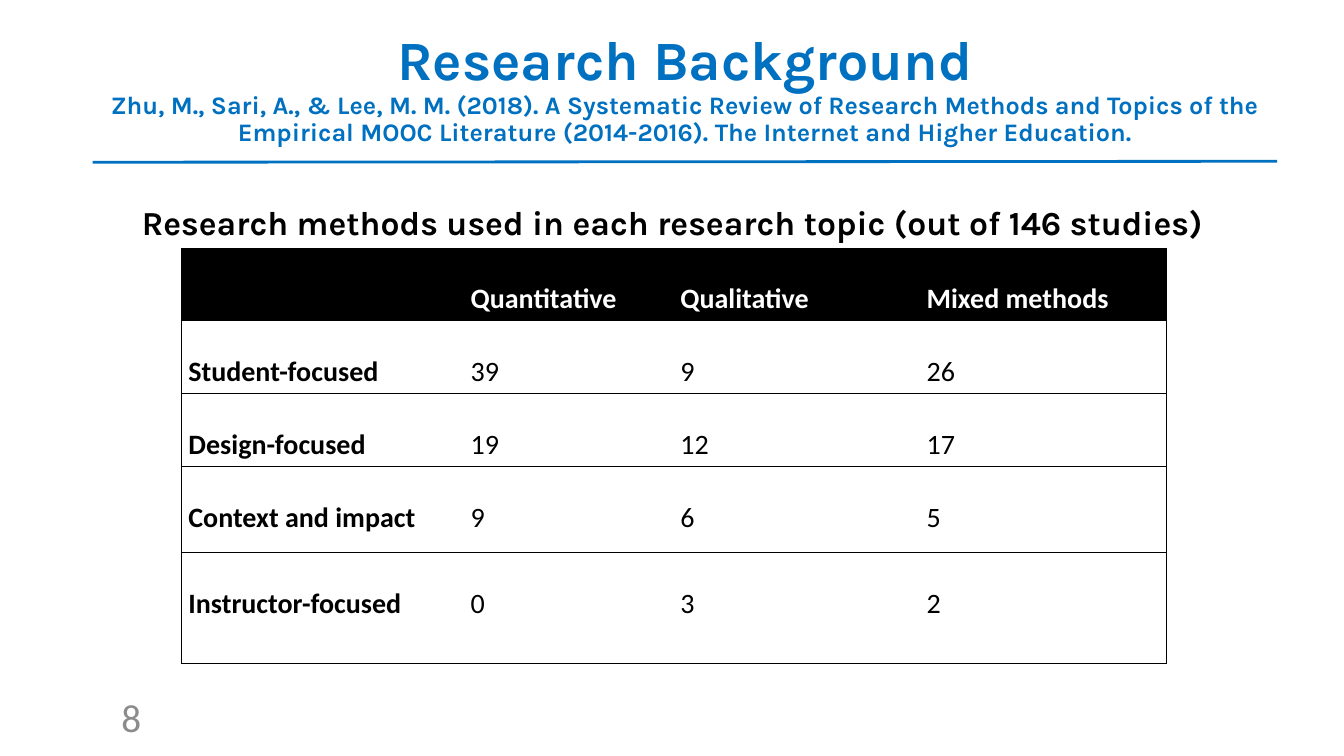
from lxml import etree
from pptx import Presentation
from pptx.dml.color import RGBColor
from pptx.enum import shapes, text
from pptx.oxml import ns
from pptx.util import Pt

BLUE, BLACK, WHITE, GREY = "0070C0", "000000", "FFFFFF", "8C8C8C"
CENTER, LEFT, RIGHT = text.PP_ALIGN.CENTER, text.PP_ALIGN.LEFT, text.PP_ALIGN.RIGHT

CITATION = (
    "Zhu, M., Sari, A., & Lee, M. M. (2018). A Systematic Review of Research "
    "Methods and Topics of the Empirical MOOC Literature (2014-2016). "
    "The Internet and Higher Education."
)
STUDIES = [
    ["", "Quantitative", "Qualitative", "Mixed methods"],
    ["Student-focused", "39", "9", "26"],
    ["Design-focused", "19", "12", "17"],
    ["Context and impact", "9", "6", "5"],
    ["Instructor-focused", "0", "3", "2"],
]
COLUMN_WIDTHS = [201.6, 149.8, 175.9, 175.9]
ROW_HEIGHTS = [52, 52, 52, 61.5, 79.5]


def color(value):
    return RGBColor.from_string(value)


def format_para(para, size, name, fill, bold=False, align=LEFT, spacing=1.0):
    para.alignment = align
    para.line_spacing = spacing
    para.font.size = Pt(size)
    para.font.name = name
    para.font.bold = bold
    para.font.color.rgb = color(fill)


def place(box, left, top, width, height):
    box.left, box.top = Pt(left), Pt(top)
    box.width, box.height = Pt(width), Pt(height)


def add_title(page, heading, citation):
    """Fill the title placeholder with a large heading above its citation."""
    title = page.shapes.title
    place(title, 66.2, 31.7, 846, 84.3)
    frame = title.text_frame
    frame.auto_size = text.MSO_AUTO_SIZE.NONE
    frame.vertical_anchor = text.MSO_ANCHOR.MIDDLE
    frame.margin_bottom = Pt(22.6)
    para = frame.paragraphs[0]
    format_para(para, 18, "Karla", BLUE, True, CENTER, 0.9)
    span = para.add_run()
    span.text = heading
    span.font.size = Pt(39.6)
    para.add_line_break()
    para.add_run().text = citation


def add_text(page, words, bounds, anchor, **style):
    box = page.shapes.add_textbox(*map(Pt, bounds))
    frame = box.text_frame
    frame.word_wrap = True
    frame.vertical_anchor = anchor
    frame.paragraphs[0].text = words
    format_para(frame.paragraphs[0], **style)


def add_rule(page, start, end):
    rule = page.shapes.add_connector(
        shapes.MSO_CONNECTOR.STRAIGHT, *map(Pt, start + end)
    )
    rule.line.color.rgb = color(BLUE)
    rule.line.width = Pt(2)
    etree.SubElement(rule._element.spPr, ns.qn("a:effectLst"))


def set_borders(cell, visible):
    """Draw thin black lines on the visible sides and none on the others."""
    properties = cell._tc.get_or_add_tcPr()
    for side in "LRTB":
        line = etree.SubElement(properties, ns.qn(f"a:ln{side}"), w=str(Pt(0.5)))
        if side in visible:
            fill = etree.SubElement(line, ns.qn("a:solidFill"))
            etree.SubElement(fill, ns.qn("a:srgbClr"), val=BLACK)
        else:
            etree.SubElement(line, ns.qn("a:noFill"))


def fill_cell(cell, words, header, bold, borders):
    set_borders(cell, borders)
    cell.fill.solid()
    cell.fill.fore_color.rgb = color(BLACK if header else WHITE)
    cell.margin_left = cell.margin_right = Pt(5)
    cell.margin_top = cell.margin_bottom = Pt(0)
    para = cell.text_frame.paragraphs[0]
    para.text = words
    format_para(para, 20, "Calibri", WHITE if header else BLACK, bold, spacing=2.0)


def add_table(page, rows, left, top):
    frame = page.shapes.add_table(
        len(rows), len(rows[0]), Pt(left), Pt(top),
        Pt(sum(COLUMN_WIDTHS)), Pt(sum(ROW_HEIGHTS)),
    )
    table = frame.table
    table.horz_banding = table.first_row = False
    for column, width in zip(table.columns, COLUMN_WIDTHS):
        column.width = Pt(width)
    for row, height in zip(table.rows, ROW_HEIGHTS):
        row.height = Pt(height)
    last = len(rows[0]) - 1
    for i, row in enumerate(rows):
        for j, words in enumerate(row):
            borders = "TB" + "L" * (j == 0) + "R" * (j == last)
            fill_cell(table.cell(i, j), words, i == 0, i == 0 or j == 0, borders)


def main():
    deck = Presentation()
    deck.slide_width, deck.slide_height = Pt(960), Pt(540)
    page = deck.slides.add_slide(deck.slide_layouts[5])
    add_title(page, "Research Background", CITATION)
    add_rule(page, (66.2, 115.9), (912.2, 115.2))
    add_text(page, "8", (28, 497.5, 80, 28.8), text.MSO_ANCHOR.MIDDLE,
             size=28, name="Calibri", fill=GREY, align=RIGHT)
    add_table(page, STUDIES, 129.6, 177.1)
    add_text(page, "Research methods used in each research topic (out of 146 studies)",
             (66.2, 123.1, 828, 100), text.MSO_ANCHOR.TOP,
             size=24, name="Karla", fill=BLACK, bold=True, align=CENTER, spacing=1.6)
    deck.save("out.pptx")


if __name__ == "__main__":
    main()
